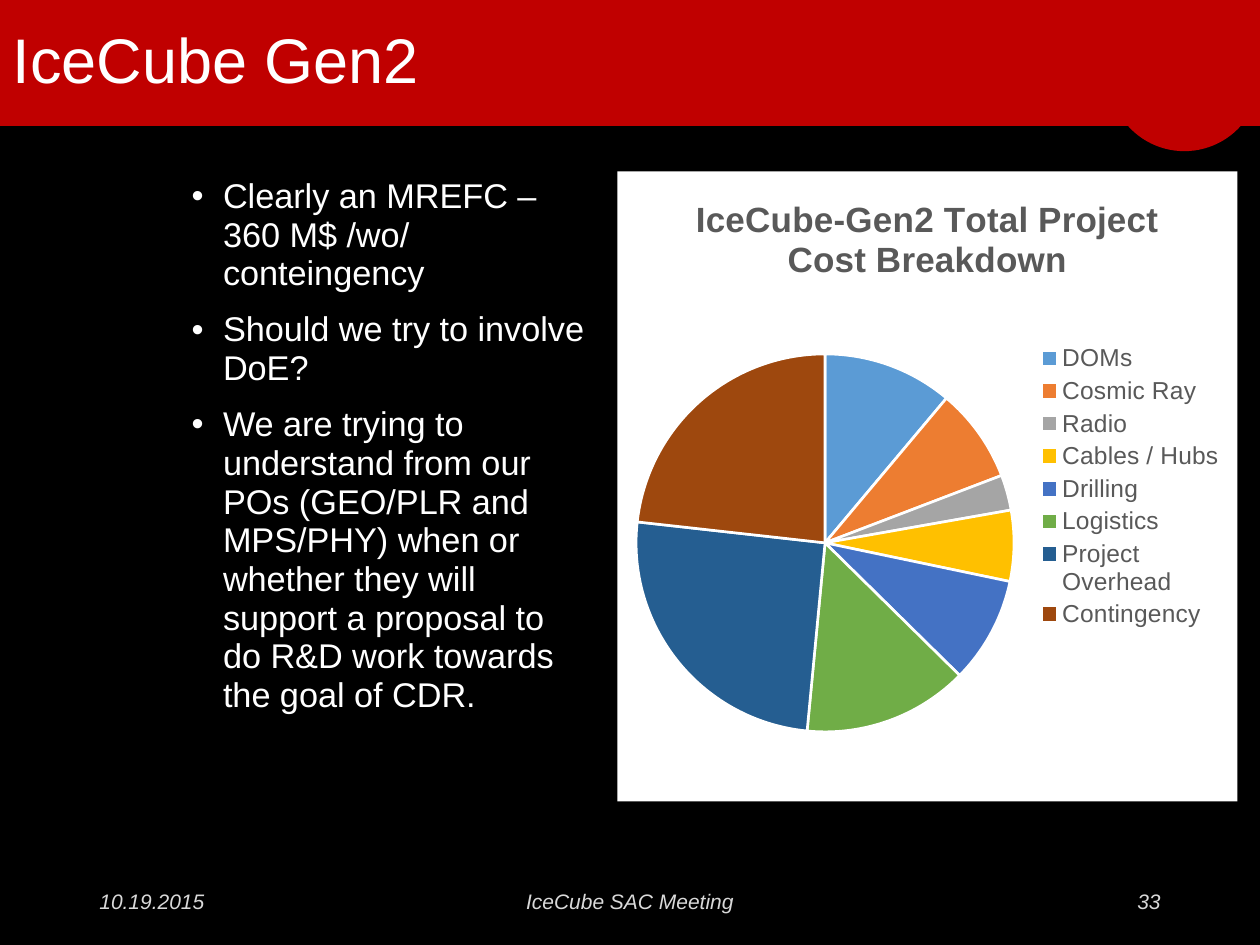
from dataclasses import dataclass

from lxml.etree import SubElement
from pptx import Presentation
from pptx.chart.data import CategoryChartData
from pptx.dml.color import RGBColor
from pptx.enum.chart import XL_CHART_TYPE as ChartType, XL_LEGEND_POSITION as LegendPosition
from pptx.enum.shapes import MSO_SHAPE as Preset
from pptx.enum.text import MSO_ANCHOR as Anchor, MSO_AUTO_SIZE as AutoSize, PP_ALIGN as Align
from pptx.oxml.ns import qn
from pptx.util import Inches, Pt


@dataclass(frozen=True)
class Theme:
    """Colours, typeface and type sizes of the slide."""
    font: str = "Arial"
    black: str = "000000"
    white: str = "FFFFFF"
    red: str = "C00000"
    footer: str = "D9D9D9"
    chart_text: str = "595959"
    title_size: float = 36
    body_size: float = 19.6
    footer_size: float = 12
    chart_title_size: float = 20
    legend_size: float = 14


THEME = Theme()

COSTS = [
    ("DOMs", 11, "5B9BD5"),
    ("Cosmic Ray", 8, "ED7D31"),
    ("Radio", 3, "A5A5A5"),
    ("Cables / Hubs", 6, "FFC000"),
    ("Drilling", 9, "4472C4"),
    ("Logistics", 14, "70AD47"),
    ("Project Overhead", 25, "255E91"),
    ("Contingency", 23, "9E480E"),
]

POINTS = [
    "Clearly an MREFC – 360 M$ /wo/ conteingency",
    "Should we try to involve DoE?",
    "We are trying to understand from our POs (GEO/PLR and MPS/PHY) when or "
    "whether they will support a proposal to do R&D work towards the goal of CDR.",
]

FOOTERS = [
    ("10.19.2015", 0.69, 2.25, Align.LEFT),
    ("IceCube SAC Meeting", 3.31, 3.38, Align.CENTER),
    ("33", 7.06, 2.25, Align.RIGHT),
]


class SlideBuilder:
    """Holds the theme and the current slide and adds elements to it."""

    def __init__(self, page, theme):
        self.page = page
        self.theme = theme
        self.paint(page.background, theme.black)

    def paint(self, target, color):
        """Give an object a solid fill."""
        target.fill.solid()
        target.fill.fore_color.rgb = RGBColor.from_string(color)

    def style(self, font, size, color, bold=False, italic=False):
        """Set every property of a font."""
        font.name = self.theme.font
        font.size = Pt(size)
        font.bold = bold
        font.italic = italic
        font.color.rgb = RGBColor.from_string(color)

    def place(self, box, left, top, width, height):
        """Move and size a placeholder."""
        box.left, box.top = Inches(left), Inches(top)
        box.width, box.height = Inches(width), Inches(height)

    def add_span(self, para, text, size, color, **marks):
        """Add a styled run to a paragraph."""
        span = para.add_run()
        span.text = text
        self.style(span.font, size, color, **marks)

    def band(self, preset, left, top, width, height):
        """Add a red header shape behind the placeholders."""
        box = self.page.shapes.add_shape(
            preset, Inches(left), Inches(top), Inches(width), Inches(height))
        self.paint(box, self.theme.red)
        box.line.fill.background()
        box.shadow.inherit = False
        self.page.shapes.title.element.addprevious(box.element)

    def title(self, text, *position):
        """Fill the title placeholder."""
        box = self.page.shapes.title
        self.place(box, *position)
        self.paint(box, self.theme.red)
        frame = box.text_frame
        frame.auto_size = AutoSize.NONE
        frame.vertical_anchor = Anchor.MIDDLE
        para = frame.paragraphs[0]
        para.alignment = Align.LEFT
        para.line_spacing = 0.9
        self.add_span(para, text, self.theme.title_size, self.theme.white)

    def bullets(self, points, *position):
        """Fill the body placeholder with a bulleted list."""
        box = self.page.placeholders[1]
        self.place(box, *position)
        frame = box.text_frame
        frame.auto_size = AutoSize.NONE
        for index, text in enumerate(points):
            para = frame.add_paragraph() if index else frame.paragraphs[0]
            para.line_spacing = 0.94
            para.space_before = Pt(10 if index else 0)
            properties = para._p.get_or_add_pPr()
            properties.set("marL", str(Inches(0.25)))
            properties.set("indent", str(-Inches(0.25)))
            SubElement(properties, qn("a:buFont"), typeface=self.theme.font)
            SubElement(properties, qn("a:buChar"), char="•")
            self.add_span(para, text, self.theme.body_size, self.theme.white)

    def footer(self, text, left, width, alignment):
        """Add one footer text box."""
        box = self.page.shapes.add_textbox(
            Inches(left), Inches(6.95), Inches(width), Inches(0.4))
        frame = box.text_frame
        frame.word_wrap = True
        frame.vertical_anchor = Anchor.MIDDLE
        para = frame.paragraphs[0]
        para.alignment = alignment
        self.add_span(para, text, self.theme.footer_size, self.theme.footer, italic=True)

    def pie(self, heading, costs, left, top, width, height):
        """Add a pie chart with a title and a legend on the right."""
        data = CategoryChartData()
        data.categories = [name for name, _, _ in costs]
        data.add_series("Series 1", [value for _, value, _ in costs])
        chart = self.page.shapes.add_chart(
            ChartType.PIE, Inches(left), Inches(top), Inches(width), Inches(height), data).chart
        self.style(chart.font, self.theme.legend_size, self.theme.chart_text)
        chart.has_title = True
        self.add_span(chart.chart_title.text_frame.paragraphs[0], heading,
                      self.theme.chart_title_size, self.theme.chart_text, bold=True)
        chart.has_legend = True
        chart.legend.position = LegendPosition.RIGHT
        chart.legend.include_in_layout = False
        self.style(chart.legend.font, self.theme.legend_size, self.theme.chart_text)
        plot = chart.plots[0]
        plot.vary_by_categories = True
        for index, (_, _, color) in enumerate(costs):
            slice_format = plot.series[0].points[index].format
            self.paint(slice_format, color)
            slice_format.line.color.rgb = RGBColor.from_string(self.theme.white)
            slice_format.line.width = Pt(1.5)
        self.lay_out_plot(chart, x=0.03, y=0.29, w=0.61, h=0.6)
        self.fill_chart(chart)

    def lay_out_plot(self, chart, **fractions):
        """Fix the inner plot area as fractions of the chart."""
        area = chart._chartSpace.chart.plotArea
        layout = area.find(qn("c:layout"))
        if layout is None:
            layout = SubElement(area, qn("c:layout"))
            area.insert(0, layout)
        manual = SubElement(layout, qn("c:manualLayout"))
        SubElement(manual, qn("c:layoutTarget"), val="inner")
        for side in "xy":
            SubElement(manual, qn(f"c:{side}Mode"), val="edge")
        for side, fraction in fractions.items():
            SubElement(manual, qn(f"c:{side}"), val=str(fraction))

    def fill_chart(self, chart):
        """Give the chart area a white background without a border."""
        space = chart._chartSpace
        properties = SubElement(space, qn("c:spPr"))
        fill = SubElement(properties, qn("a:solidFill"))
        SubElement(fill, qn("a:srgbClr"), val=self.theme.white)
        SubElement(SubElement(properties, qn("a:ln")), qn("a:noFill"))
        space.chart.addnext(properties)


def main():
    """Build and save the slide."""
    deck = Presentation()
    deck.slide_width, deck.slide_height = Inches(10), Inches(7.5)
    slide = SlideBuilder(deck.slides.add_slide(deck.slide_layouts[1]), THEME)
    slide.band(Preset.RECTANGLE, 8.5, 0, 1.5, 1)
    slide.band(Preset.OVAL, 8.8, 0, 1.2, 1.2)
    slide.title("IceCube Gen2", 0, 0, 8.5, 1)
    slide.bullets(POINTS, 1.42, 1.36, 3.36, 5)
    for entry in FOOTERS:
        slide.footer(*entry)
    slide.pie("IceCube-Gen2 Total Project Cost Breakdown", COSTS, 4.9, 1.36, 4.92, 5)
    deck.save("out.pptx")


if __name__ == "__main__":
    main()
